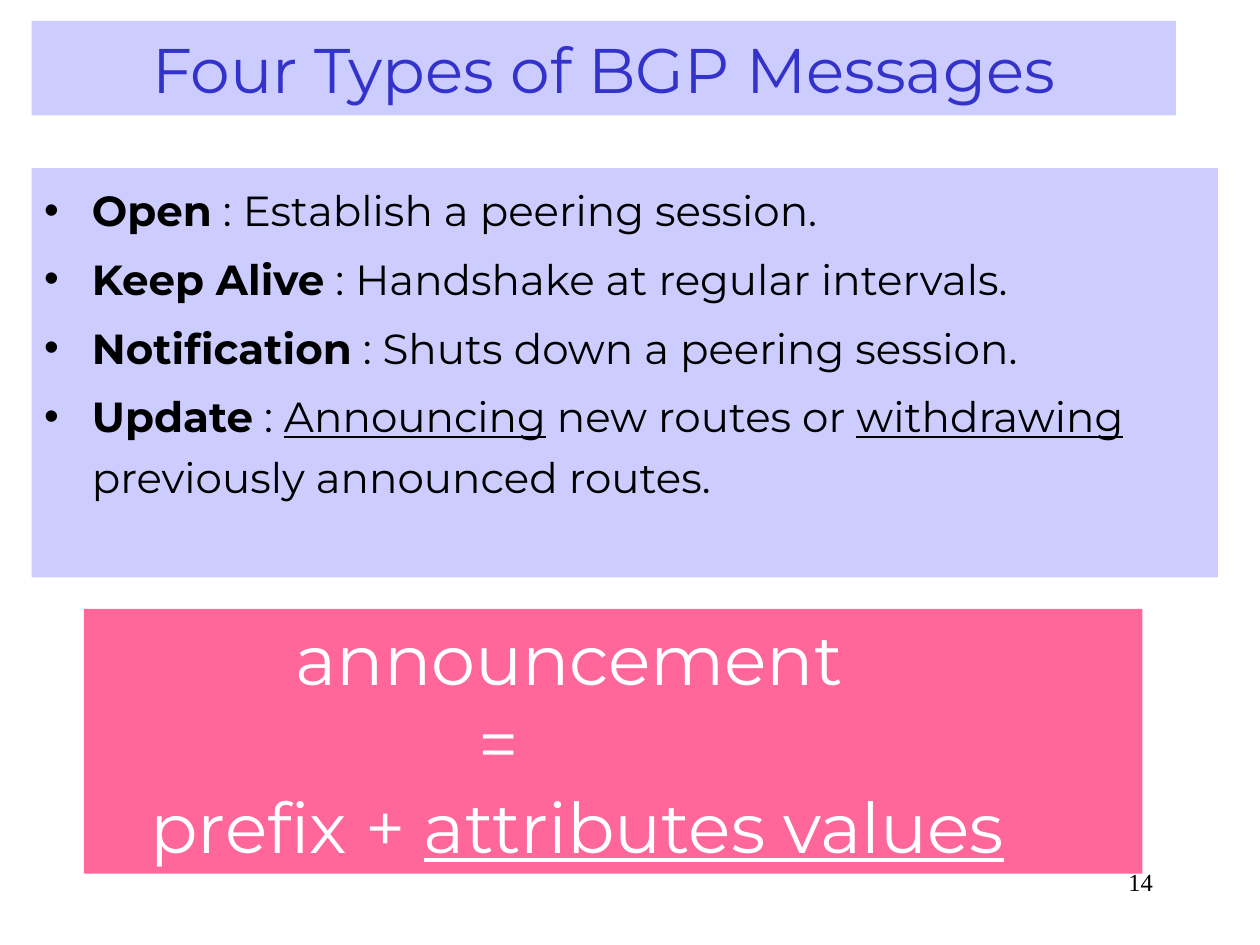
from pptx import Presentation
from pptx.dml.color import RGBColor
from pptx.enum.shapes import MSO_SHAPE
from pptx.enum.text import MSO_ANCHOR as Anchor, MSO_AUTO_SIZE as AutoSize, PP_ALIGN as Align
from pptx.oxml.xmlchemy import OxmlElement
from pptx.util import Inches, Pt

COLORS = {"panel": "CCCCFF", "title": "3333CC", "text": "000000",
          "callout": "FF6699", "light": "FFFFFF"}
FONT, NUMBER_FONT = "Montserrat", "Times New Roman"
UNIT = Inches(1) / 12


class SlideBuilder:
    def __init__(self, deck):
        self.page = deck.slides.add_slide(deck.slide_layouts[1])

    def color(self, name):
        return RGBColor.from_string(COLORS[name])

    def area(self, *cells):
        return [round(cell * UNIT) for cell in cells]

    def prepare(self, box, cells, fill=None, anchor=Anchor.TOP):
        box.left, box.top, box.width, box.height = self.area(*cells)
        if fill:
            box.fill.solid()
            box.fill.fore_color.rgb = self.color(fill)
        frame = box.text_frame
        frame.word_wrap = True
        frame.auto_size = AutoSize.NONE
        frame.vertical_anchor = anchor
        return frame

    def add_spans(self, para, runs, size, color="text", font=FONT, align=Align.LEFT):
        para.alignment = align
        for text, style in runs:
            span = para.add_run()
            span.text = text
            span.font.name, span.font.size = font, Pt(size)
            span.font.color.rgb = self.color(color)
            span.font.bold = style == "bold"
            span.font.underline = style == "underline"

    def paragraphs(self, frame, count):
        return [frame.paragraphs[0]] + [frame.add_paragraph() for _ in range(count - 1)]

    def indent(self, para, left, first=0):
        properties = para._p.get_or_add_pPr()
        properties.set("marL", str(Inches(left)))
        properties.set("indent", str(Inches(first)))
        return properties

    def title(self, cells, text):
        frame = self.prepare(self.page.shapes.title, cells, "panel", Anchor.MIDDLE)
        self.add_spans(frame.paragraphs[0], [(text, None)], 36, "title", align=Align.CENTER)

    def bullets(self, cells, items):
        frame = self.prepare(self.page.placeholders[1], cells, "panel")
        for para, runs in zip(self.paragraphs(frame, len(items)), items):
            properties = self.indent(para, 0.38, -0.38)
            para.line_spacing = 1.2
            para.space_before = Pt(4.8)
            bullet = OxmlElement("a:buChar")
            bullet.set("char", "•")
            properties.append(bullet)
            self.add_spans(para, runs, 24)

    def callout(self, cells, lines):
        box = self.page.shapes.add_shape(MSO_SHAPE.RECTANGLE, *self.area(*cells))
        box.shadow.inherit = False
        box.line.fill.background()
        frame = self.prepare(box, cells, "callout")
        for para, (left, runs) in zip(self.paragraphs(frame, len(lines)), lines):
            self.indent(para, left)
            self.add_spans(para, runs, 40, "light")

    def page_number(self, cells, text):
        box = self.page.shapes.add_textbox(*self.area(*cells))
        frame = self.prepare(box, cells)
        self.add_spans(frame.paragraphs[0], [(text, None)], 14, font=NUMBER_FONT, align=Align.RIGHT)


def main():
    deck = Presentation()
    deck.slide_width, deck.slide_height = Inches(10), Inches(7.5)
    builder = SlideBuilder(deck)
    builder.title((3, 2, 109, 9), "Four Types of BGP Messages")
    builder.bullets((3, 16, 113, 39), [
        [("Open", "bold"), (" : Establish a peering session.", None)],
        [("Keep Alive", "bold"), (" : Handshake at regular intervals.", None)],
        [("Notification", "bold"), (" : Shuts down a peering session.", None)],
        [("Update", "bold"), (" : ", None), ("Announcing", "underline"),
         (" new routes or ", None), ("withdrawing", "underline"),
         (" previously announced routes.", None)],
    ])
    builder.callout((8, 58, 100.8, 25.2), [
        (1.58, [("announcement", None)]),
        (3.03, [("=", None)]),
        (0.43, [("prefix + ", None), ("attributes values", "underline")]),
    ])
    builder.page_number((86, 82, 25, 6), "14")
    deck.save("out.pptx")


if __name__ == "__main__":
    main()
